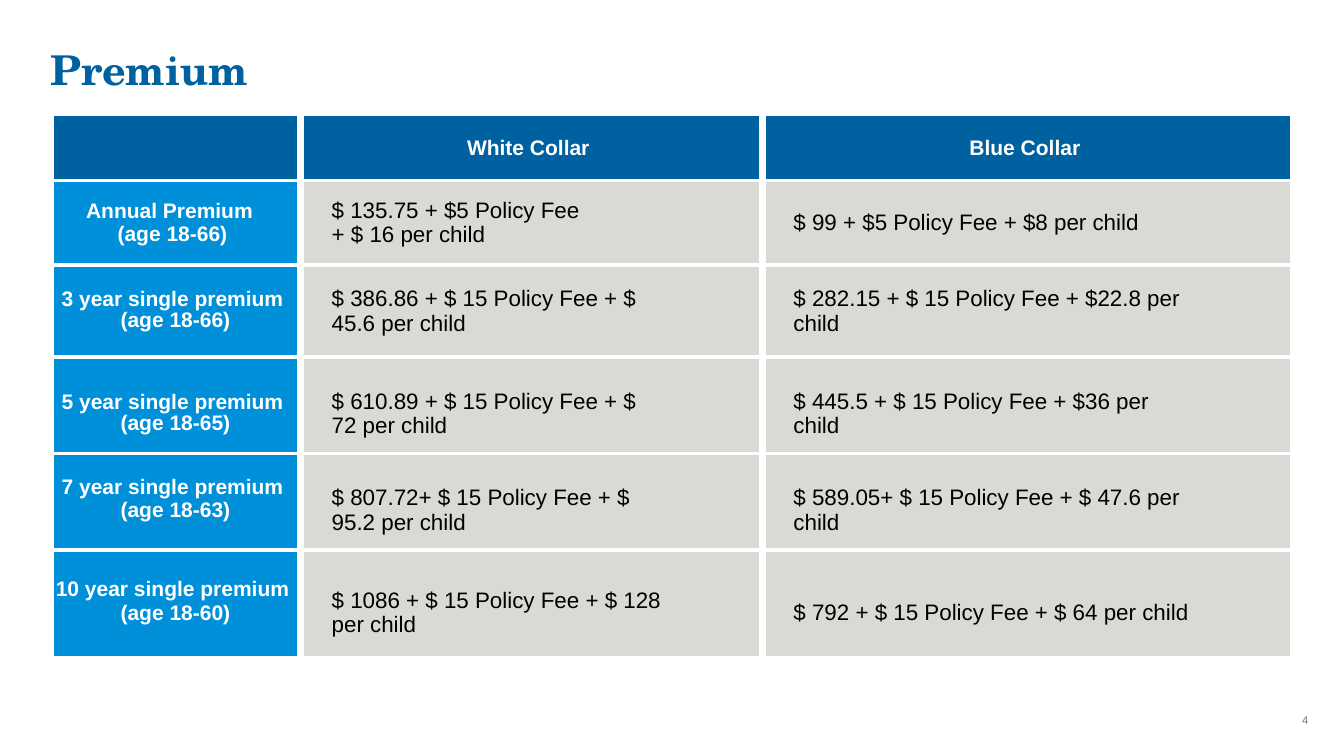
from lxml import etree
from pptx import Presentation, util as u
from pptx.dml.color import RGBColor
from pptx.enum import text as t
from pptx.oxml.ns import qn

HUES = {"navy": "0061A0", "sky": "0090DA", "stone": "D9D9D6",
        "white": "FFFFFF", "black": "000000", "gray": "75787B"}
HEAD = ["", "White Collar", "Blue Collar"]
PLANS = [
    ["Annual Premium \n(age 18-66)",
     "$ 135.75 + $5 Policy Fee\n+ $ 16 per child",
     "$ 99 + $5 Policy Fee + $8 per child"],
    ["3 year single premium \n(age 18-66)",
     "$ 386.86 + $ 15 Policy Fee + $ 45.6 per child",
     "$ 282.15 + $ 15 Policy Fee + $22.8 per child"],
    ["5 year single premium \n(age 18-65)",
     "$ 610.89 + $ 15 Policy Fee + $ 72 per child",
     "$ 445.5 + $ 15 Policy Fee + $36 per child"],
    ["7 year single premium \n(age 18-63)",
     "$ 807.72+ $ 15 Policy Fee + $ 95.2 per child",
     "$ 589.05+ $ 15 Policy Fee + $ 47.6 per child"],
    ["10 year single premium \n(age 18-60)",
     "$ 1086 + $ 15 Policy Fee + $ 128 per child",
     "$ 792 + $ 15 Policy Fee + $ 64 per child"],
]
COLS = [2.48, 4.58, 5.27]
ROWS = [0.65, 0.84, 0.91, 0.96, 0.96, 1.07]
TIGHT = (2, 3)
TOPS = [0, 0, 0, 0.17, 0.17, 0.17]
FEET = [0, 0, 0, 0, 0.23, 0.23]
EDGES = {"lnL": 6, "lnR": 6, "lnT": 3, "lnB": 3}
SIDES = ("left", "top", "right", "bottom")
LEFT, CENTER = t.PP_ALIGN.LEFT, t.PP_ALIGN.CENTER
MID = t.MSO_ANCHOR.MIDDLE
FORMS = {
    "title": ({"name": "TeX Gyre Schola", "size": u.Pt(29.3), "bold": True},
              "navy", {"alignment": LEFT, "line_spacing": 0.9}),
    "page": ({"name": "Arial", "size": u.Pt(8), "bold": False},
             "gray", {"alignment": CENTER}),
    "label": ({"name": "Arial", "size": u.Pt(15), "bold": True},
              "white", {"alignment": CENTER}),
    "tight": ({"name": "Arial", "size": u.Pt(15), "bold": True},
              "white", {"alignment": CENTER, "line_spacing": 0.9}),
    "price": ({"name": "Arial", "size": u.Pt(16), "bold": False},
              "black", {"alignment": LEFT}),
}


def color(key):
    return RGBColor.from_string(HUES[key])


def pad(box, gaps):
    for side, gap in zip(SIDES, gaps):
        setattr(box, "margin_" + side, u.Inches(gap))


def write(frame, words, form):
    face, hue, lay = FORMS[form]
    frame.word_wrap = True
    frame.text = words
    for para in frame.paragraphs:
        for key, val in lay.items():
            setattr(para, key, val)
        for run in para.runs:
            for key, val in face.items():
                setattr(run.font, key, val)
            run.font.color.rgb = color(hue)


def edge(cell, skip):
    props = cell._tc.get_or_add_tcPr()
    kept = [item for item in EDGES.items() if item[0] not in skip]
    for spot, (side, wide) in enumerate(kept):
        line = etree.Element(qn("a:" + side), w=str(u.Pt(wide)))
        fill = etree.SubElement(line, qn("a:solidFill"))
        etree.SubElement(fill, qn("a:srgbClr"), val=HUES["white"])
        props.insert(spot, line)


def label(slide, words, spot, form, gaps, anchor):
    frame = slide.shapes.add_textbox(*map(u.Inches, spot)).text_frame
    pad(frame, gaps)
    frame.vertical_anchor = anchor
    write(frame, words, form)
    return frame


def main():
    deck = Presentation()
    deck.slide_width, deck.slide_height = u.Inches(13.33), u.Inches(7.5)
    slide = deck.slides.add_slide(deck.slide_layouts[6])
    label(slide, " 4", (12.53, 7.02, 0.8, 0.25), "page",
          (0.1, 0.05, 0.1, 0.05), MID)
    title = label(slide, "Premium", (0.5, 0.5, 10.34, 0.8), "title",
                  (0, 0, 0, 0), t.MSO_ANCHOR.TOP)
    title.paragraphs[0].runs[0]._r.get_or_add_rPr().set("spc", "-10")

    spot = map(u.Inches, (0.5, 1.14, sum(COLS), sum(ROWS)))
    grid = slide.shapes.add_table(len(ROWS), len(COLS), *spot).table
    for col, wide in zip(grid.columns, COLS):
        col.width = u.Inches(wide)
    for row, high in zip(grid.rows, ROWS):
        row.height = u.Inches(high)
    for r, line in enumerate([HEAD] + PLANS):
        for c, words in enumerate(line):
            cell = grid.cell(r, c)
            price = r > 0 and c > 0
            cell.vertical_anchor = MID
            cell.fill.solid()
            hue = "navy" if r == 0 else "stone" if price else "sky"
            cell.fill.fore_color.rgb = color(hue)
            if price:
                pad(cell, (0.31, TOPS[r], 0.98, 0))
            else:
                pad(cell, (0, TOPS[r], 0.06 if r < 2 else 0, FEET[r]))
            form = "price" if price else "tight" if r in TIGHT else "label"
            if words:
                write(cell.text_frame, words, form)
            edge(cell, ("lnT",) if r == 0 else ())
    deck.save("out.pptx")


if __name__ == "__main__":
    main()
